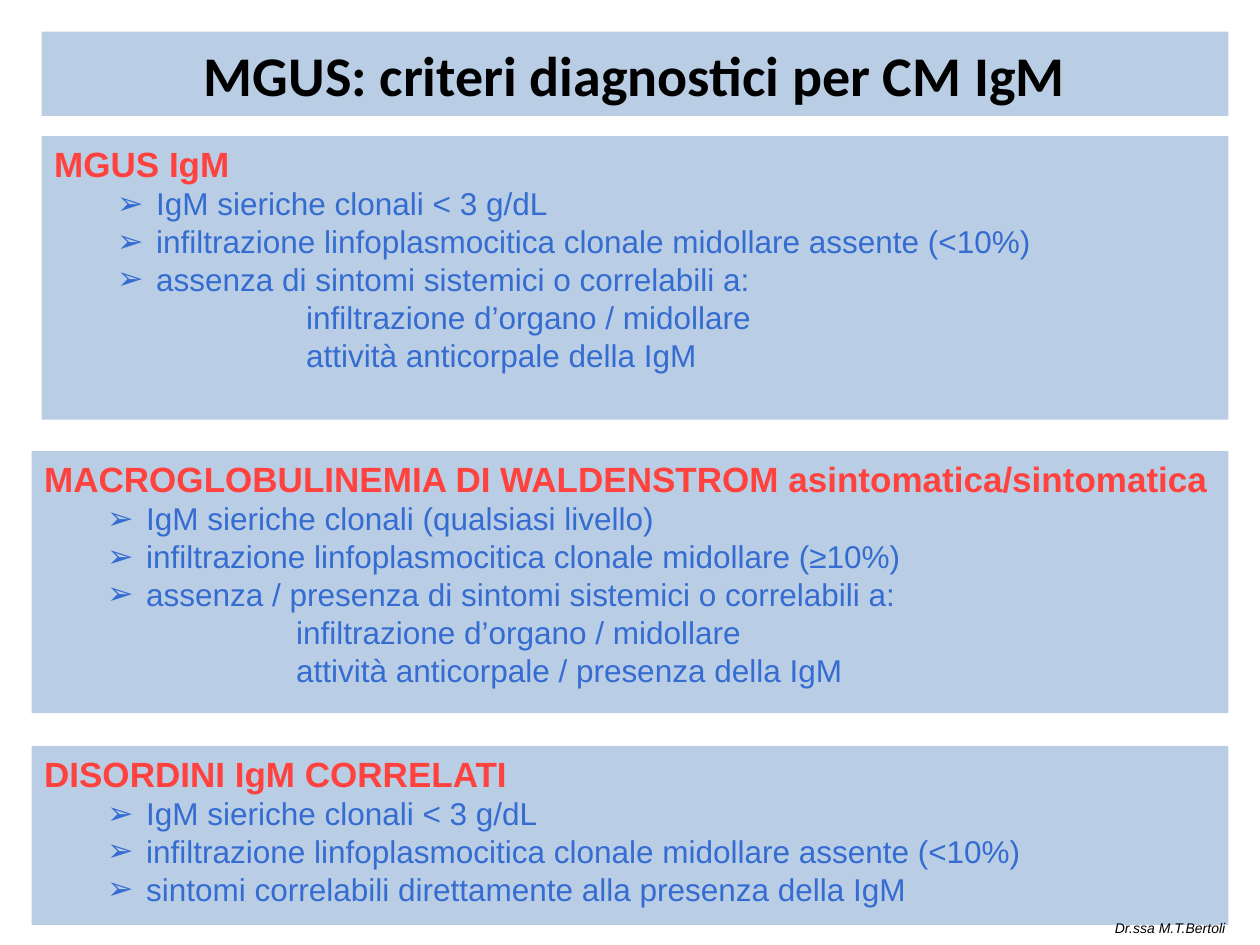
from dataclasses import dataclass

from lxml.etree import SubElement
from pptx import Presentation
from pptx.dml.color import RGBColor
from pptx.enum.text import MSO_ANCHOR as Anchor, MSO_AUTO_SIZE as AutoSize, PP_ALIGN as Align
from pptx.oxml.ns import qn
from pptx.util import Inches, Pt

PANEL_FILL = "B9CDE5"
HEADING_COLOR = "FF423D"
CRITERIA_COLOR = "356CD1"
BLACK = "000000"
RIGHT_EDGE = 9.75


@dataclass(frozen=True)
class Panel:
    placeholder_index: int
    left: float
    top: float
    height: float
    heading: str
    criteria: tuple[str, ...]
    details: tuple[str, ...] = ()


PANELS = (
    Panel(
        1, 0.33, 1.08, 2.25, "MGUS IgM",
        (
            "IgM sieriche clonali < 3 g/dL",
            "infiltrazione linfoplasmocitica clonale midollare assente (<10%)",
            "assenza di sintomi sistemici o correlabili a:",
        ),
        ("infiltrazione d’organo / midollare", "attività anticorpale della IgM"),
    ),
    Panel(
        2, 0.25, 3.58, 2.08, "MACROGLOBULINEMIA DI WALDENSTROM asintomatica/sintomatica",
        (
            "IgM sieriche clonali (qualsiasi livello)",
            "infiltrazione linfoplasmocitica clonale midollare (≥10%)",
            "assenza / presenza di sintomi sistemici o correlabili a:",
        ),
        ("infiltrazione d’organo / midollare", "attività anticorpale / presenza della IgM"),
    ),
    Panel(
        3, 0.25, 5.92, 1.42, "DISORDINI IgM CORRELATI",
        (
            "IgM sieriche clonali < 3 g/dL",
            "infiltrazione linfoplasmocitica clonale midollare assente (<10%)",
            "sintomi correlabili direttamente alla presenza della IgM",
        ),
    ),
)


def rgb(color: str) -> RGBColor:
    return RGBColor.from_string(color)


def place_filled(shape, left: float, top: float, height: float) -> None:
    shape.left, shape.top = Inches(left), Inches(top)
    shape.width, shape.height = Inches(RIGHT_EDGE - left), Inches(height)
    shape.fill.solid()
    shape.fill.fore_color.rgb = rgb(PANEL_FILL)
    shape.text_frame.auto_size = AutoSize.NONE
    shape.text_frame.word_wrap = True


def format_font(paragraph, size: float, color: str, bold=False, italic=False, name="Arial") -> None:
    font = paragraph.font
    font.name, font.size = name, Pt(size)
    font.bold, font.italic = bold, italic
    font.color.rgb = rgb(color)


def set_indent(paragraph, left: float, hanging: float = 0, bullet: str = "") -> None:
    paragraph.alignment = Align.LEFT
    paragraph.space_before = Pt(0)
    properties = paragraph._p.get_or_add_pPr()
    properties.set("marL", str(Inches(left)))
    properties.set("indent", str(-Inches(hanging)))
    if bullet:
        SubElement(properties, qn("a:buFont"), typeface="Arial")
        SubElement(properties, qn("a:buChar"), char=bullet)
    else:
        SubElement(properties, qn("a:buNone"))


def fill_panel(shape, panel: Panel) -> None:
    place_filled(shape, panel.left, panel.top, panel.height)
    frame = shape.text_frame
    frame.vertical_anchor = Anchor.TOP
    heading = frame.paragraphs[0]
    heading.text = panel.heading
    set_indent(heading, 0)
    format_font(heading, 20, HEADING_COLOR, bold=True)
    for criterion in panel.criteria:
        paragraph = frame.add_paragraph()
        paragraph.text = criterion
        paragraph.level = 1
        set_indent(paragraph, 0.81, 0.31, "➢")
        format_font(paragraph, 18, CRITERIA_COLOR)
    for detail in panel.details:
        paragraph = frame.add_paragraph()
        paragraph.text = detail
        set_indent(paragraph, 2)
        format_font(paragraph, 18, CRITERIA_COLOR)


def add_title(slide, text: str) -> None:
    title = slide.shapes.title
    place_filled(title, 0.33, 0.25, 0.67)
    title.text_frame.vertical_anchor = Anchor.MIDDLE
    paragraph = title.text_frame.paragraphs[0]
    paragraph.text = text
    paragraph.alignment = Align.CENTER
    format_font(paragraph, 32, BLACK, bold=True, name="Calibri")


def add_author(slide, text: str) -> None:
    box = slide.shapes.add_textbox(Inches(8.75), Inches(7.25), Inches(1.17), Inches(0.23))
    box.text_frame.word_wrap = True
    paragraph = box.text_frame.paragraphs[0]
    paragraph.text = text
    format_font(paragraph, 8, BLACK, italic=True)


def main() -> None:
    presentation = Presentation()
    presentation.slide_width, presentation.slide_height = Inches(10), Inches(7.5)
    comparison_layout = presentation.slide_layouts.get_by_name("Comparison")
    slide = presentation.slides.add_slide(comparison_layout)
    add_title(slide, "MGUS: criteri diagnostici per CM IgM")
    placeholders = {shape.placeholder_format.idx: shape for shape in slide.placeholders}
    for panel in PANELS:
        fill_panel(placeholders[panel.placeholder_index], panel)
    unused = placeholders[4].element
    unused.getparent().remove(unused)
    add_author(slide, "Dr.ssa M.T.Bertoli")
    presentation.save("out.pptx")


if __name__ == "__main__":
    main()
